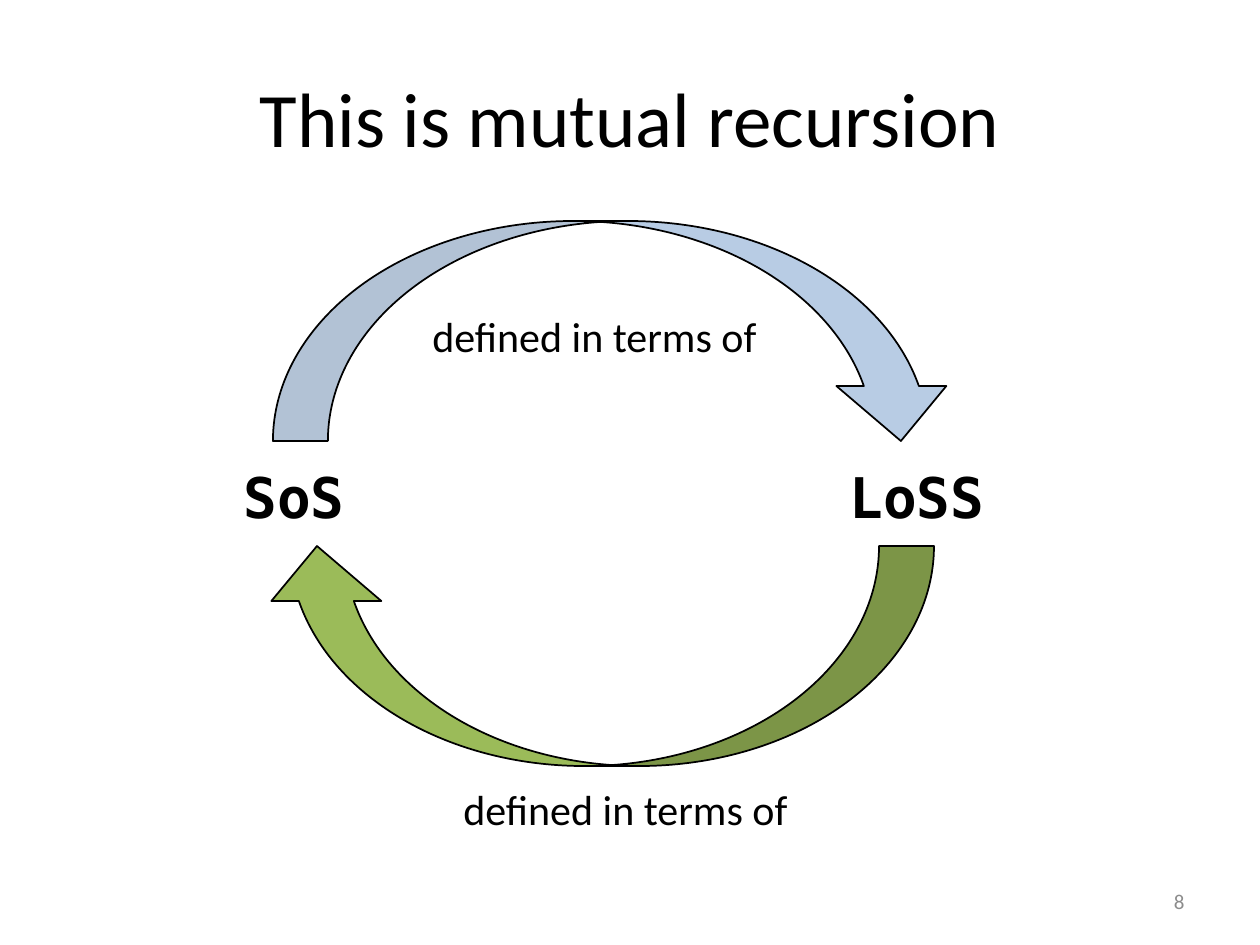
from lxml.etree import SubElement
from pptx import Presentation
from pptx.dml.color import RGBColor
from pptx.enum.shapes import MSO_SHAPE
from pptx.enum.text import MSO_ANCHOR, PP_ALIGN
from pptx.oxml.ns import qn
from pptx.util import Pt

COLORS = {"text": "000000", "number": "8C8C8C", "blue": "4F81BD", "green": "9BBB59"}
SCALE = 914400 / 126


def px(*lengths):
    return [round(length * SCALE) for length in lengths]


def write(box, text, size, color="text", font="Calibri", bold=False, align=PP_ALIGN.LEFT):
    frame = box.text_frame
    frame.word_wrap = True
    frame.vertical_anchor = MSO_ANCHOR.MIDDLE
    frame.text = text
    paragraph = frame.paragraphs[0]
    paragraph.alignment = align
    span = paragraph.runs[0]
    span.font.name = font
    span.font.size = Pt(size)
    span.font.bold = bold
    span.font.color.rgb = RGBColor.from_string(COLORS[color])


deck = Presentation()
deck.slide_width, deck.slide_height = px(1260, 945)
page = deck.slides.add_slide(deck.slide_layouts[5])

title = page.shapes.title
title.left, title.top, title.width, title.height = px(63, 38, 1134, 157)
write(title, "This is mutual recursion", 44, align=PP_ALIGN.CENTER)

for text, left in [("SoS", 231), ("LoSS", 837)]:
    box = page.shapes.add_textbox(*px(left, 458, 200, 76))
    write(box, text, 32, font="DejaVu Sans Mono", bold=True)

arrows = [
    ("blue", 273, 221, 683, 0, 40),
    ("green", 262, 546, 672, 180, 100),
]
for color, left, top, width, rotation, opacity in arrows:
    arrow = page.shapes.add_shape(MSO_SHAPE.CURVED_DOWN_ARROW, *px(left, top, width, 220))
    arrow.rotation = rotation
    arrow.shadow.inherit = False
    arrow.fill.solid()
    arrow.fill.fore_color.rgb = RGBColor.from_string(COLORS[color])
    arrow.line.color.rgb = RGBColor.from_string(COLORS["text"])
    arrow.line.width = Pt(1)
    if opacity < 100:
        fill_color = arrow.fill._xPr.find(qn("a:solidFill"))[0]
        SubElement(fill_color, qn("a:alpha"), val=str(opacity * 1000))

for left, top in [(420, 304), (451, 777)]:
    box = page.shapes.add_textbox(*px(left, top, 378, 63))
    write(box, "defined in terms of", 24)

number = page.shapes.add_textbox(*px(903, 876, 294, 50))
write(number, "8", 12, "number", align=PP_ALIGN.RIGHT)

deck.save("out.pptx")
